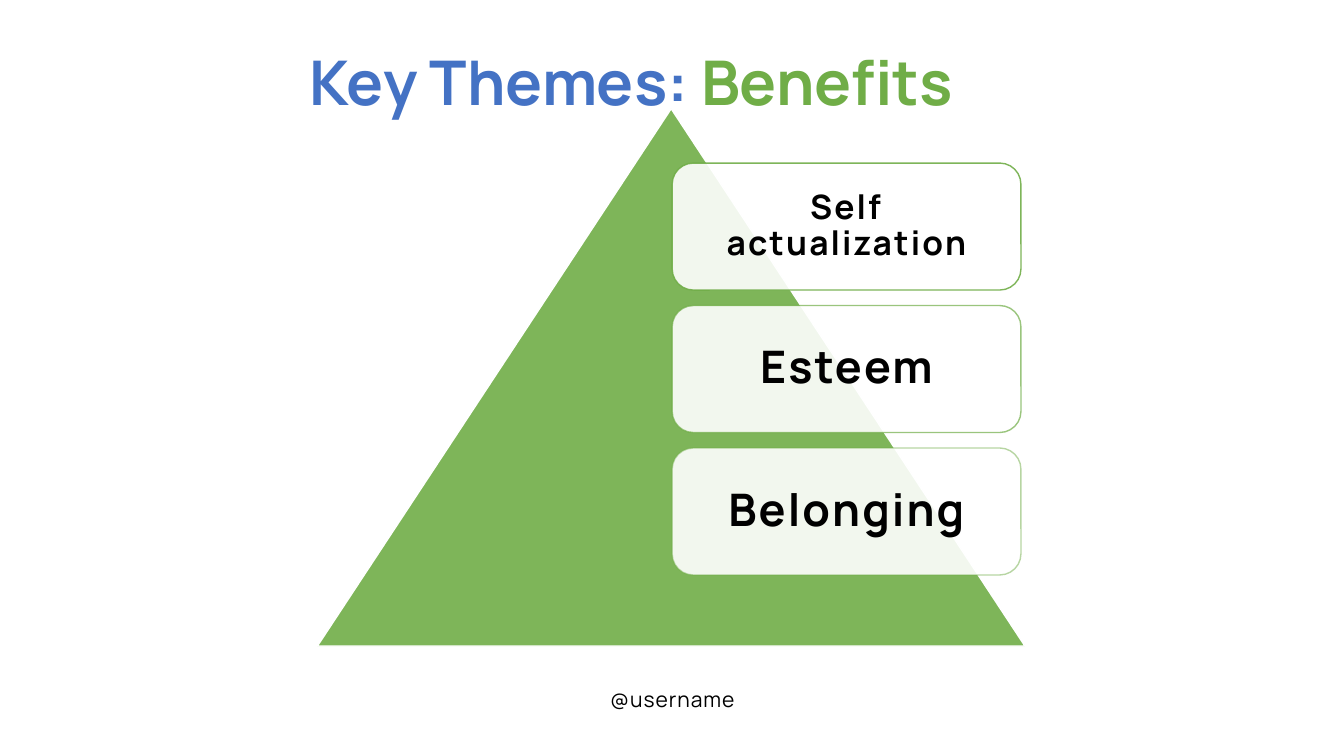
from pptx import Presentation
from pptx.dml.color import RGBColor
from pptx.enum.shapes import MSO_SHAPE
from pptx.enum.text import MSO_ANCHOR, PP_ALIGN
from pptx.oxml.ns import qn
from pptx.util import Cm, Pt
from lxml import etree

FONT = "Manrope"
COLORS = {
    "blue": "4472C4",
    "green": "70AD47",
    "white": "FFFFFF",
    "black": "000000",
}
# Label, text size, inner margin (cm), outline opacity (%)
NEEDS = [
    ("Self actualization", 24, 0.25, 90),
    ("Esteem", 32, 0.33, 70),
    ("Belonging", 32, 0.33, 50),
]
CARD_TOP, CARD_PITCH = 4.11, 3.59


def rgb(name):
    return RGBColor.from_string(COLORS[name])


def set_opacity(solid_fill, percent):
    alpha = etree.SubElement(solid_fill.find(qn("a:srgbClr")), qn("a:alpha"))
    alpha.set("val", str(percent * 1000))


def add_run(paragraph, text, size, color, bold=False, spacing=0):
    """Add a run; spacing is the letter spacing in points."""
    run = paragraph.add_run()
    run.text = text
    run.font.name = FONT
    run.font.size = Pt(size)
    run.font.bold = bold
    run.font.color.rgb = rgb(color)
    if spacing:
        run.font._element.set("spc", str(round(spacing * 100)))


def add_caption(slide, left, top, width, height, anchor):
    """Add a centred text box and return its paragraph."""
    caption = slide.shapes.add_textbox(Cm(left), Cm(top), Cm(width), Cm(height))
    frame = caption.text_frame
    frame.word_wrap = True
    frame.vertical_anchor = anchor
    frame.paragraphs[0].alignment = PP_ALIGN.CENTER
    return frame.paragraphs[0]


def add_panel(slide, preset, box, fill, outline, outline_opacity=100):
    """Add a 90 % opaque shape with a thin outline."""
    panel = slide.shapes.add_shape(preset, *(Cm(length) for length in box))
    panel.shadow.inherit = False
    panel.fill.solid()
    panel.fill.fore_color.rgb = rgb(fill)
    panel.line.color.rgb = rgb(outline)
    panel.line.width = Pt(1)
    properties = panel.element.spPr
    set_opacity(properties.find(qn("a:solidFill")), 90)
    if outline_opacity < 100:
        set_opacity(properties.find(qn("a:ln")).find(qn("a:solidFill")), outline_opacity)
    return panel


def add_need_card(slide, top, label, size, margin, outline_opacity):
    card = add_panel(slide, MSO_SHAPE.ROUNDED_RECTANGLE, (16.94, top, 8.79, 3.2),
                     "white", "green", outline_opacity)
    frame = card.text_frame
    frame.word_wrap = True
    frame.vertical_anchor = MSO_ANCHOR.MIDDLE
    frame.margin_left = frame.margin_right = Cm(margin)
    frame.margin_top = frame.margin_bottom = Cm(margin)
    paragraph = frame.paragraphs[0]
    paragraph.alignment = PP_ALIGN.CENTER
    paragraph.line_spacing = 0.9
    add_run(paragraph, label, size, "black", bold=True, spacing=1.5)


def main():
    deck = Presentation()
    deck.slide_width, deck.slide_height = Cm(33.87), Cm(19.05)
    slide = deck.slides.add_slide(deck.slide_layouts[6])

    title = add_caption(slide, 7.37, 0.99, 17.07, 2.13, MSO_ANCHOR.TOP)
    add_run(title, "Key Themes: ", 44, "blue", bold=True)
    add_run(title, "Benefits", 44, "green", bold=True)

    handle = add_caption(slide, 8.41, 17.17, 17.07, 0.89, MSO_ANCHOR.BOTTOM)
    add_run(handle, "@username", 15, "black", spacing=0.7)

    add_panel(slide, MSO_SHAPE.ISOSCELES_TRIANGLE, (8, 2.74, 17.83, 13.54),
              "green", "white")
    for level, need in enumerate(NEEDS):
        add_need_card(slide, CARD_TOP + level * CARD_PITCH, *need)

    deck.save("out.pptx")


if __name__ == "__main__":
    main()
